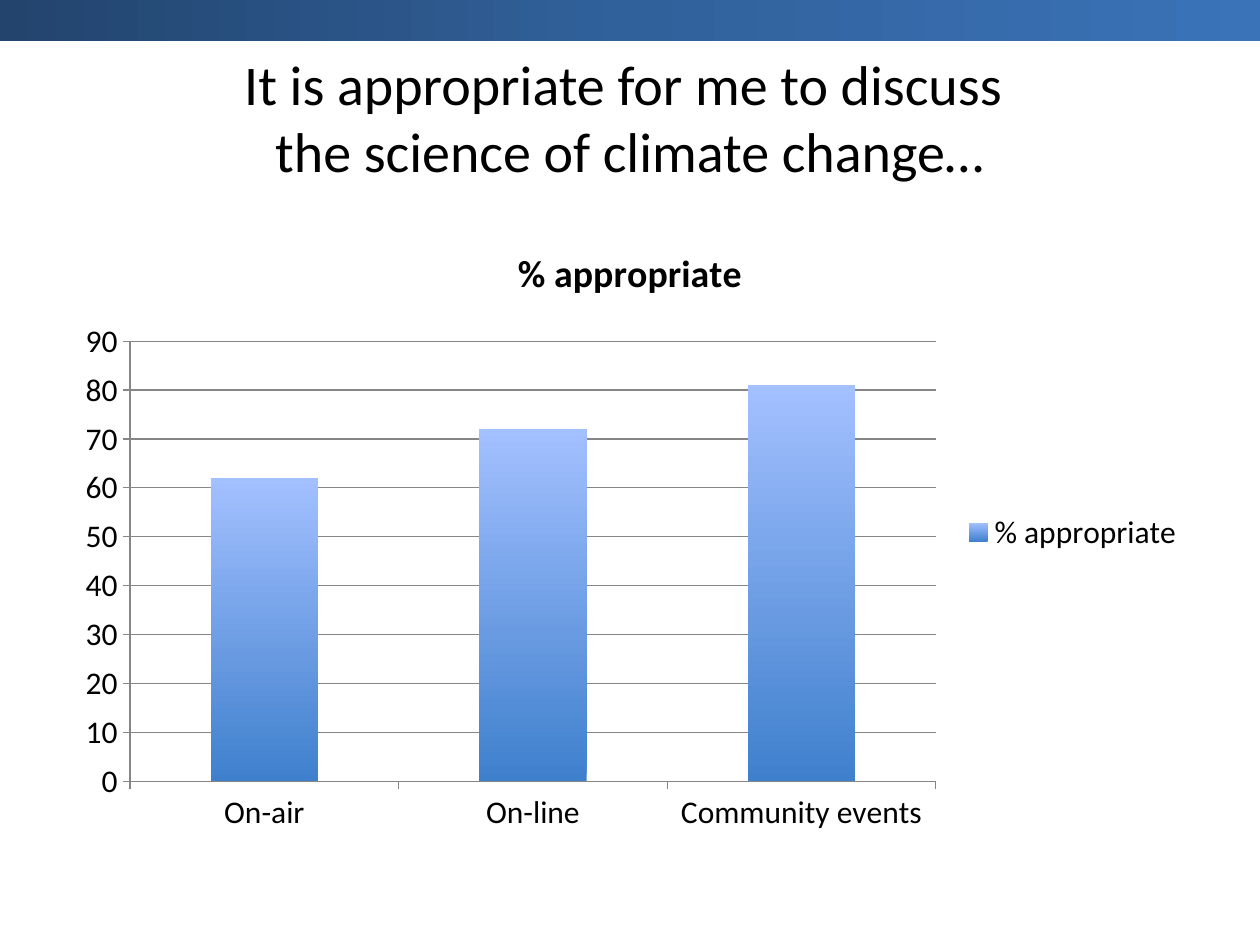
import copy

import pptx
import pptx.chart.data
import pptx.dml.color
import pptx.enum.chart
import pptx.enum.shapes
import pptx.enum.text
import pptx.util
from pptx.util import Inches

TITLE_LINES = ["It is appropriate for me to discuss ", "the science of climate change…"]
SERIES_NAME = "% appropriate"
RESULTS = {"On-air": 62, "On-line": 72, "Community events": 81}

THEME = {
    "font": "Calibri",
    "title_size": 32,
    "chart_title_size": 21.6,
    "chart_size": 18,
    "text": "000000",
    "axis": "868686",
    "column": ["3F80CD", "A3C0FF"],
    "banner": ["22446D", "31619B", "3A73B8"],
}

SLIDE_WIDTH, SLIDE_HEIGHT = 10, 7.5
MARGIN = 0.5
CONTENT_WIDTH = SLIDE_WIDTH - 2 * MARGIN
TITLE_TOP, TITLE_HEIGHT = 0.3, 1.25
CHART_TOP, CHART_HEIGHT = 1.75, 4.95
BANNER_HEIGHT = 0.33


def rgb(value):
    return pptx.dml.color.RGBColor.from_string(value)


def style_font(font, size, bold=False):
    font.name = THEME["font"]
    font.size = pptx.util.Pt(size)
    font.bold = bold
    font.color.rgb = rgb(THEME["text"])


def fill_gradient(fill, colors, angle):
    """Spread the colors evenly along a linear gradient."""
    fill.gradient()
    fill.gradient_angle = angle
    first_stop = fill._fill._gradFill.gsLst[0]
    for _ in colors[2:]:
        first_stop.addnext(copy.deepcopy(first_stop))
    for index, (stop, color) in enumerate(zip(fill.gradient_stops, colors)):
        stop.color.rgb = rgb(color)
        stop.position = index / (len(colors) - 1)


def style_line(line):
    line.color.rgb = rgb(THEME["axis"])
    line.width = pptx.util.Pt(0.75)


def add_title(slide):
    title = slide.shapes.title
    title.left, title.top = Inches(MARGIN), Inches(TITLE_TOP)
    title.width, title.height = Inches(CONTENT_WIDTH), Inches(TITLE_HEIGHT)
    frame = title.text_frame
    frame.word_wrap = True
    frame.vertical_anchor = pptx.enum.text.MSO_ANCHOR.MIDDLE
    paragraph = frame.paragraphs[0]
    paragraph.alignment = pptx.enum.text.PP_ALIGN.CENTER
    for index, line in enumerate(TITLE_LINES):
        if index:
            paragraph.add_line_break()
        run = paragraph.add_run()
        run.text = line
        style_font(run.font, THEME["title_size"])


def add_results_chart(slide):
    data = pptx.chart.data.CategoryChartData()
    data.categories = list(RESULTS)
    data.add_series(SERIES_NAME, list(RESULTS.values()))
    chart = slide.shapes.add_chart(
        pptx.enum.chart.XL_CHART_TYPE.COLUMN_STACKED,
        Inches(MARGIN), Inches(CHART_TOP),
        Inches(CONTENT_WIDTH), Inches(CHART_HEIGHT), data,
    ).chart
    style_font(chart.font, THEME["chart_size"])

    chart.has_title = True
    run = chart.chart_title.text_frame.paragraphs[0].add_run()
    run.text = SERIES_NAME
    style_font(run.font, THEME["chart_title_size"], bold=True)
    chart.chart_title.include_in_layout = False

    chart.has_legend = True
    chart.legend.position = pptx.enum.chart.XL_LEGEND_POSITION.RIGHT
    chart.legend.include_in_layout = False

    plot = chart.plots[0]
    plot.vary_by_categories = False
    plot.gap_width = 150
    plot.overlap = 100
    fill_gradient(plot.series[0].format.fill, THEME["column"], 90)

    for axis in (chart.category_axis, chart.value_axis):
        axis.major_tick_mark = pptx.enum.chart.XL_TICK_MARK.OUTSIDE
        axis.minor_tick_mark = pptx.enum.chart.XL_TICK_MARK.NONE
        style_line(axis.format.line)
    chart.value_axis.has_major_gridlines = True
    style_line(chart.value_axis.major_gridlines.format.line)


def add_banner(slide):
    banner = slide.shapes.add_shape(
        pptx.enum.shapes.MSO_SHAPE.RECTANGLE,
        0, 0, Inches(SLIDE_WIDTH), Inches(BANNER_HEIGHT),
    )
    banner.shadow.inherit = False
    banner.line.fill.background()
    fill_gradient(banner.fill, THEME["banner"], 0)


def main():
    presentation = pptx.Presentation()
    presentation.slide_width = Inches(SLIDE_WIDTH)
    presentation.slide_height = Inches(SLIDE_HEIGHT)
    title_only = presentation.slide_layouts.get_by_name("Title Only")
    slide = presentation.slides.add_slide(title_only)
    add_title(slide)
    add_results_chart(slide)
    add_banner(slide)
    presentation.save("out.pptx")


if __name__ == "__main__":
    main()
